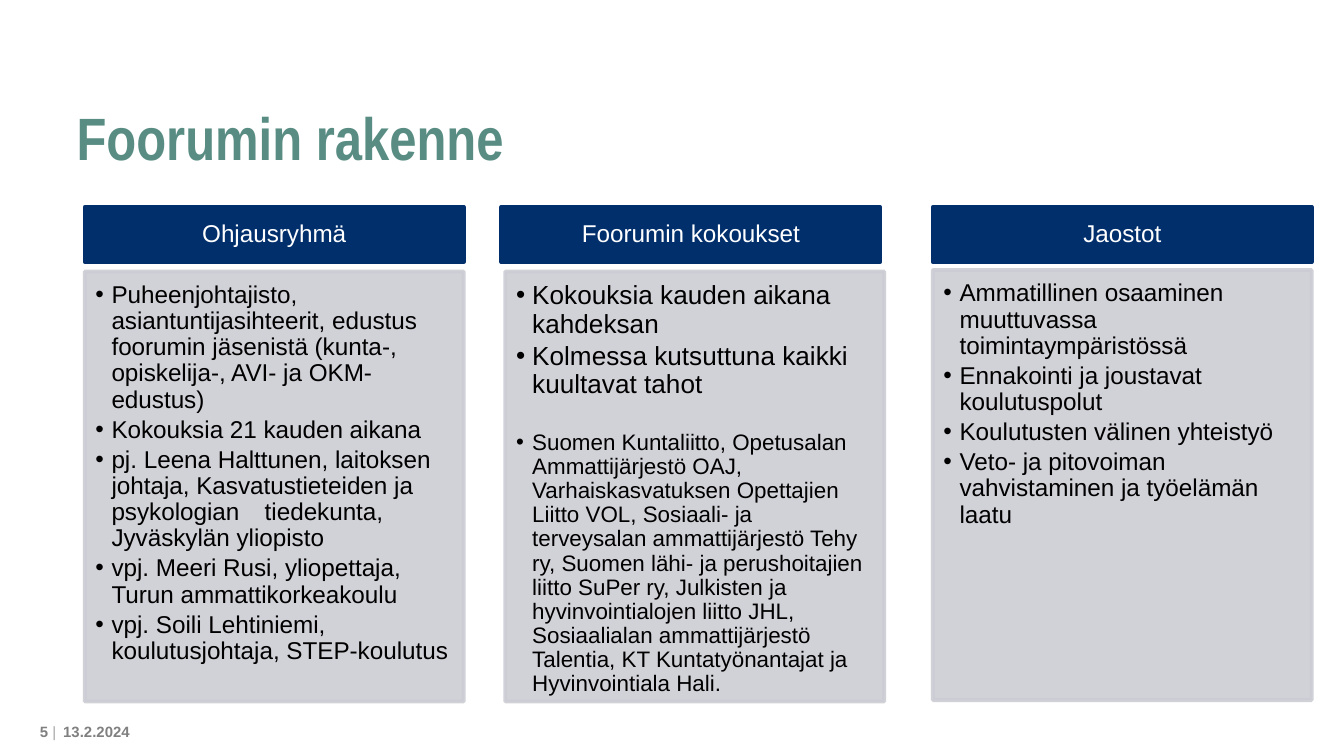
import pptx
import pptx.dml.color
import pptx.enum.shapes
import pptx.enum.text
import pptx.oxml.ns
import pptx.util
from lxml import etree

Inches = pptx.util.Inches
Pt = pptx.util.Pt
ALIGN = pptx.enum.text.PP_ALIGN
ANCHOR = pptx.enum.text.MSO_ANCHOR

NAVY, GREY = "002F6C", "CCCDD4"
COLUMN_WIDTH, HEADING_TOP, HEADING_HEIGHT, LIST_HEIGHT = 2.82, 1.54, 0.41, 3.2

COLUMNS = [
    ("Ohjausryhmä", 0.63, 0.63, 2.02, [
        ("Puheenjohtajisto, asiantuntijasihteerit, edustus foorumin jäsenistä "
         "(kunta-, opiskelija-, AVI- ja OKM-edustus)", 13, 0),
        ("Kokouksia 21 kauden aikana", 13, 0),
        ("pj. Leena Halttunen, laitoksen johtaja, Kasvatustieteiden ja "
         "psykologian \ttiedekunta, Jyväskylän yliopisto", 13, 0),
        ("vpj. Meeri Rusi, yliopettaja, Turun ammattikorkeakoulu", 13, 0),
        ("vpj. Soili Lehtiniemi, koulutusjohtaja, STEP-koulutus", 13, 0),
    ]),
    ("Foorumin kokoukset", 3.73, 3.76, 2.02, [
        ("Kokouksia kauden aikana kahdeksan", 14, 0),
        ("Kolmessa kutsuttuna kaikki kuultavat tahot", 14, 0),
        ("Suomen Kuntaliitto, Opetusalan Ammattijärjestö OAJ, "
         "Varhaiskasvatuksen Opettajien Liitto VOL, Sosiaali- ja terveysalan "
         "ammattijärjestö Tehy ry, Suomen lähi- ja perushoitajien liitto "
         "SuPer ry, Julkisten ja hyvinvointialojen liitto JHL, Sosiaalialan "
         "ammattijärjestö Talentia, KT Kuntatyönantajat ja Hyvinvointiala "
         "Hali.", 12, 15),
    ]),
    ("Jaostot", 6.94, 6.94, 2.01, [
        ("Ammatillinen osaaminen muuttuvassa toimintaympäristössä", 13, 0),
        ("Ennakointi ja joustavat koulutuspolut", 13, 0),
        ("Koulutusten välinen yhteistyö", 13, 0),
        ("Veto- ja pitovoiman vahvistaminen ja työelämän laatu", 13, 0),
    ]),
]


def rgb(color):
    """Turn a hex string into a colour."""
    return pptx.dml.color.RGBColor.from_string(color)


def place(shape, left, top, width, height):
    """Move and size a shape, in inches."""
    shape.left, shape.top = Inches(left), Inches(top)
    shape.width, shape.height = Inches(width), Inches(height)


def set_font(font, size, color, bold=False, name="Arial"):
    """Set face, size, weight and colour of a font."""
    font.name, font.size, font.bold = name, Pt(size), bold
    font.color.rgb = rgb(color)


def set_frame(shape, anchor, left, top, right, bottom):
    """Set anchor and insets of a wrapping text frame."""
    frame = shape.text_frame
    frame.word_wrap = True
    frame.auto_size = pptx.enum.text.MSO_AUTO_SIZE.NONE
    frame.vertical_anchor = anchor
    frame.margin_left, frame.margin_top = Inches(left), Inches(top)
    frame.margin_right, frame.margin_bottom = Inches(right), Inches(bottom)
    return frame


def paint(shape, color):
    """Give a shape one colour for fill and outline."""
    shape.fill.solid()
    shape.fill.fore_color.rgb = rgb(color)
    shape.line.color.rgb = rgb(color)
    shape.line.width = Pt(2)


def set_opacity(shape, percent):
    """Make the fill and outline of a shape partly transparent."""
    for color in shape.fill._xPr.iter(pptx.oxml.ns.qn("a:srgbClr")):
        alpha = etree.SubElement(color, pptx.oxml.ns.qn("a:alpha"))
        alpha.set("val", str(percent * 1000))


def set_bullet(paragraph, indent, tab_size):
    """Give a paragraph a round bullet, a hanging indent and a tab size."""
    properties = paragraph._p.get_or_add_pPr()
    properties.set("marL", str(Inches(indent)))
    properties.set("indent", str(-Inches(indent)))
    properties.set("defTabSz", str(Inches(tab_size)))
    bullet = etree.SubElement(properties, pptx.oxml.ns.qn("a:buChar"))
    bullet.set("char", "•")


def add_title(slide, text):
    """Fill and format the title."""
    title = slide.shapes.title
    place(title, 0.47, 0.26, 8.99, 1.07)
    paragraph = set_frame(title, ANCHOR.BOTTOM, 0.1, 0.05, 0.1, 0.05).paragraphs[0]
    paragraph.text = text
    paragraph.alignment = ALIGN.LEFT
    set_font(paragraph.font, 32, "598D83", True, "Arial Narrow")


def add_heading(slide, text, left):
    """Add the dark heading bar of a column."""
    heading = slide.shapes.add_shape(
        pptx.enum.shapes.MSO_SHAPE.RECTANGLE, Inches(left), Inches(HEADING_TOP),
        Inches(COLUMN_WIDTH), Inches(HEADING_HEIGHT))
    heading.shadow.inherit = False
    paint(heading, NAVY)
    paragraph = set_frame(heading, ANCHOR.MIDDLE, 0.1, 0.06, 0.1, 0.06).paragraphs[0]
    paragraph.text = text
    paragraph.alignment = ALIGN.CENTER
    paragraph.line_spacing = 0.9
    set_font(paragraph.font, 13, "FFFFFF")


def fill_list(panel, items, left, top):
    """Turn a body placeholder into a grey panel with a bulleted list."""
    place(panel, left, top, COLUMN_WIDTH, LIST_HEIGHT)
    paint(panel, GREY)
    set_opacity(panel, 90)
    frame = set_frame(panel, ANCHOR.TOP, 0.08, 0.08, 0.1, 0.11)
    for index, (text, size, space_before) in enumerate(items):
        paragraph = frame.add_paragraph() if index else frame.paragraphs[0]
        paragraph.text = text
        set_bullet(paragraph, 0.12, 0.63)
        paragraph.alignment = ALIGN.LEFT
        paragraph.line_spacing = 0.9
        paragraph.space_before, paragraph.space_after = Pt(space_before), Pt(2)
        set_font(paragraph.font, size, "000000")


def add_footer(slide, left, width, insets, alignment, runs):
    """Add a footer box from (text, colour, bold) runs."""
    footer = slide.shapes.add_textbox(
        Inches(left), Inches(5.33), Inches(width), Inches(0.22))
    paragraph = set_frame(footer, ANCHOR.MIDDLE, *insets).paragraphs[0]
    paragraph.alignment = alignment
    for text, color, bold in runs:
        run = paragraph.add_run()
        run.text = text
        set_font(run.font, 8, color, bold)


def main():
    """Build the slide and save it."""
    deck = pptx.Presentation()
    deck.slide_width = Inches(10)
    deck.slide_height = deck.slide_width * 9 // 16
    slide = deck.slides.add_slide(deck.slide_layouts.get_by_name("Comparison"))
    add_title(slide, "Foorumin rakenne")
    *panels, spare = list(slide.placeholders)[1:]
    spare.element.getparent().remove(spare.element)
    for panel, (heading, heading_left, left, top, items) in zip(panels, COLUMNS):
        add_heading(slide, heading, heading_left)
        fill_list(panel, items, left, top)
    add_footer(slide, 0, 0.44, (0.1, 0.05, 0.02, 0.05), ALIGN.RIGHT,
               [("5 ", "808080", True), ("|", "A6A6A6", False)])
    add_footer(slide, 0.47, 0.75, (0, 0, 0, 0), ALIGN.LEFT,
               [("13.2.2024", "808080", True)])
    deck.save("out.pptx")


if __name__ == "__main__":
    main()
